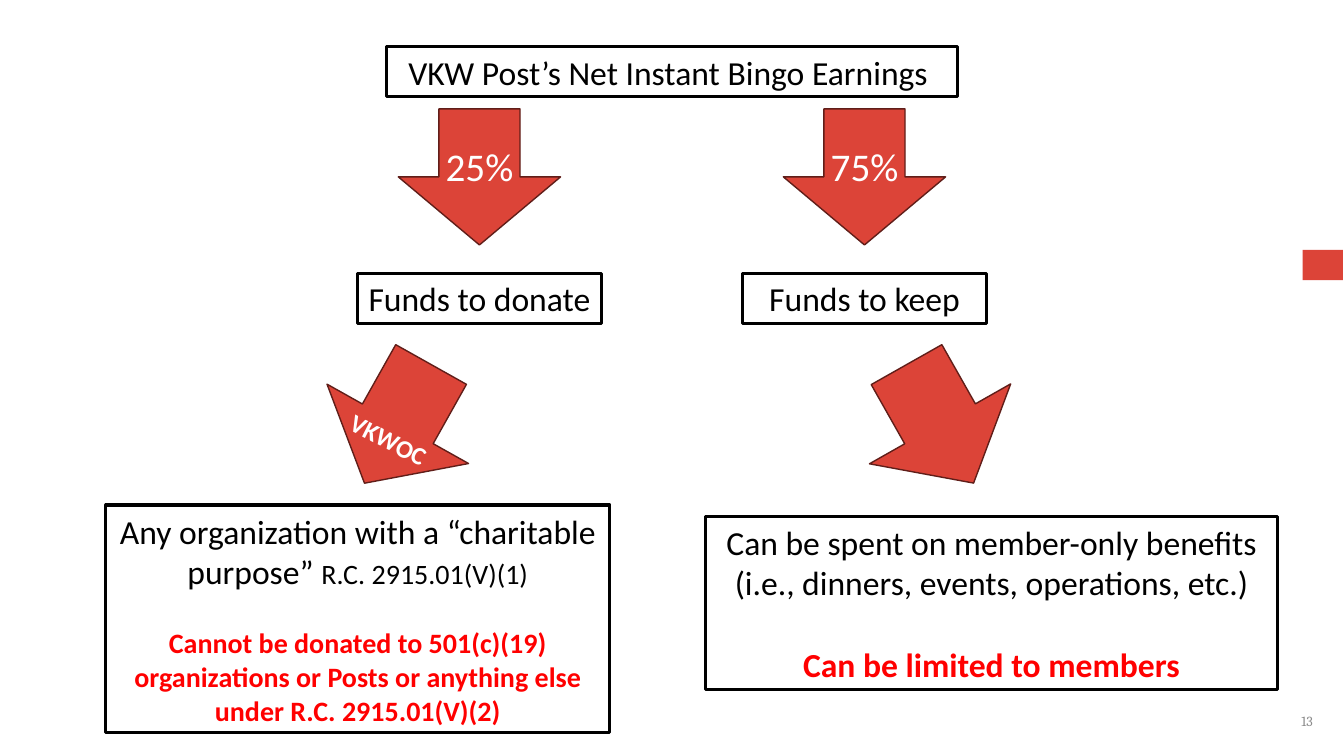
from dataclasses import dataclass

from pptx import Presentation
from pptx import util as u
from pptx.dml.color import RGBColor
from pptx.enum import shapes, text

# Places are (centre column, centre row, width, height) on a 40 by 30 grid.
COLUMNS, ROWS = 40, 30
MIDDLE, BRANCH = 20, 5.73

TITLE = ("VKW Post’s Net Instant Bingo Earnings ", (MIDDLE, 2.84, 17, 2))
PAGE_NUMBER = ("13", (34.87, 28.6, 9, 1.6))
ACCENT_TAB = (39.37, 10.52, 1.2, 1.2)
COUNCIL = ("VKWOC", (11.57, 17.44, 3.03, 1.6), 27)

# Paragraphs are (space before in points, runs); runs are (text, size, style).
BRANCHES = [
    {
        "column": MIDDLE - BRANCH,
        "share": "25%",
        "funds": "Funds to donate",
        "turned_arrow": (11.84, 29.3),
        "outcome_place": (10.65, 24.56, 15, 9.04),
        "outcome": [
            (0, [("Any organization with a “charitable purpose” ", "body", "plain"),
                 ("R.C. 2915.01(V)(1)", "small", "plain")]),
            (24.4, [("Cannot be donated to 501(c)(19) organizations or Posts "
                     "or anything else under R.C. 2915.01(V)(2)", "small", "warning")]),
        ],
    },
    {
        "column": MIDDLE + BRANCH,
        "share": "75%",
        "funds": "Funds to keep",
        "turned_arrow": (27.98, 330.5),
        "outcome_place": (29.51, 23.92, 17, 6.88),
        "outcome": [
            (0, [("Can be spent on member-only benefits", "body", "plain")]),
            (0, [("(i.e., dinners, events, operations, etc.)", "body", "plain")]),
            (29.3, [("Can be limited to members", "body", "warning")]),
        ],
    },
]


@dataclass(frozen=True)
class Theme:
    font: str = "Calibri"
    number_font: str = "Cambria"
    ink: str = "000000"
    light: str = "FFFFFF"
    accent: str = "DC4438"
    accent_edge: str = "601E19"
    warning: str = "FF0000"
    muted: str = "8C8C8C"
    share: int = 28
    body: int = 24
    small: int = 20
    council: int = 18
    number: int = 10


theme = Theme()
presentation = Presentation()
presentation.slide_width = u.Inches(13.33)
presentation.slide_height = u.Inches(7.5)
slide = presentation.slides.add_slide(presentation.slide_layouts[5])


def frame(place):
    """Turn a grid place into left, top, width and height."""
    column, row, width, height = place
    cell_width = presentation.slide_width / COLUMNS
    cell_height = presentation.slide_height / ROWS
    return (round((column - width / 2) * cell_width),
            round((row - height / 2) * cell_height),
            round(width * cell_width), round(height * cell_height))


def add_run(paragraph, words, size, color=theme.ink, bold=False, font=theme.font):
    run = paragraph.add_run()
    run.text = words
    run.font.name = font
    run.font.size = u.Pt(size)
    run.font.bold = bold
    run.font.color.rgb = RGBColor.from_string(color)


def write(shape, words, size=theme.body, align=text.PP_ALIGN.CENTER, wrap=True, **style):
    """Write a string, or a list of paragraphs made of runs, into a shape."""
    body = shape.text_frame
    body.word_wrap = wrap
    body.auto_size = text.MSO_AUTO_SIZE.NONE
    body.vertical_anchor = text.MSO_ANCHOR.MIDDLE
    paragraphs = [(0, [(words, size, style)])] if isinstance(words, str) else words
    for index, (space, runs) in enumerate(paragraphs):
        paragraph = body.add_paragraph() if index else body.paragraphs[0]
        paragraph.alignment = align
        paragraph.space_before = u.Pt(space)
        for run_words, run_size, run_style in runs:
            add_run(paragraph, run_words, run_size, **run_style)


def outline(shape, color, width):
    shape.line.color.rgb = RGBColor.from_string(color)
    shape.line.width = u.Pt(width)


def add_block(place, kind=shapes.MSO_SHAPE.RECTANGLE, fill=None, edge=None,
              edge_width=1, rotation=0):
    shape = slide.shapes.add_shape(kind, *frame(place))
    shape.shadow.inherit = False
    shape.rotation = rotation
    if fill:
        shape.fill.solid()
        shape.fill.fore_color.rgb = RGBColor.from_string(fill)
    else:
        shape.fill.background()
    if edge:
        outline(shape, edge, edge_width)
    else:
        shape.line.fill.background()
    return shape


def add_box(place, words):
    write(add_block(place, edge=theme.ink, edge_width=2.25), words)


def add_arrow(column, row, rotation=0):
    add_block((column, row, 4.83, 5.4), shapes.MSO_SHAPE.DOWN_ARROW,
              theme.accent, theme.accent_edge, rotation=rotation)


def add_label(place, words, rotation=0, **style):
    label = slide.shapes.add_textbox(*frame(place))
    label.rotation = rotation
    write(label, words, **style)


RUN_STYLES = {"plain": {}, "warning": {"color": theme.warning, "bold": True}}
SIZES = {"body": theme.body, "small": theme.small}

add_block(ACCENT_TAB, fill=theme.accent)
number, number_place = PAGE_NUMBER
add_label(number_place, number, size=theme.number, align=text.PP_ALIGN.RIGHT,
          color=theme.muted, font=theme.number_font)

title = slide.shapes.title
title_words, title_place = TITLE
title.left, title.top, title.width, title.height = frame(title_place)
outline(title, theme.ink, 2.25)
write(title, title_words)

for branch in BRANCHES:
    column = branch["column"]
    add_arrow(column, 7.02)
    add_label((column, 6.58, 4.5, 2.28), branch["share"],
              size=theme.share, color=theme.light)
    add_box((column, 11.84, 7.26, 2), branch["funds"])
    turned_column, angle = branch["turned_arrow"]
    add_arrow(turned_column, 16.82, angle)
    add_box(branch["outcome_place"], [
        (space, [(words, SIZES[size], RUN_STYLES[style]) for words, size, style in runs])
        for space, runs in branch["outcome"]])

council, council_place, council_angle = COUNCIL
add_label(council_place, council, council_angle, size=theme.council,
          color=theme.light, bold=True, wrap=False)

presentation.save("out.pptx")
